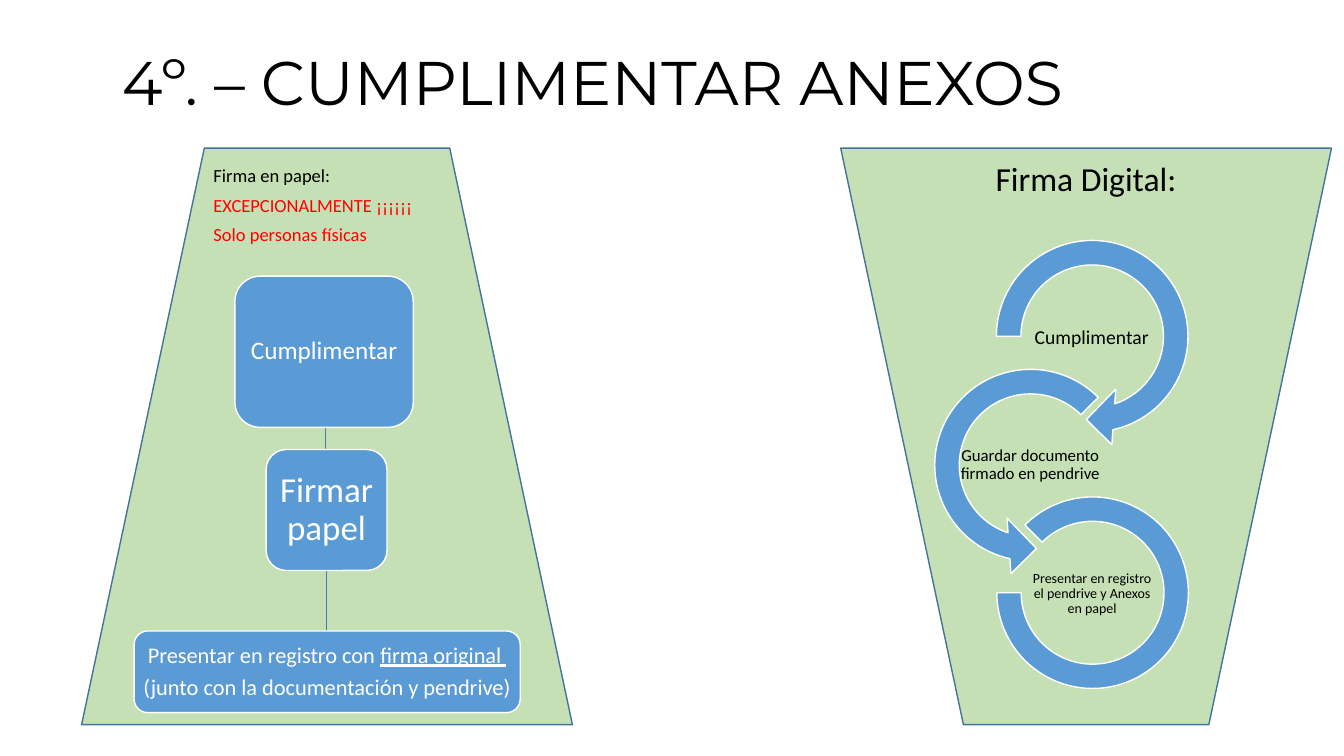
from dataclasses import dataclass

from lxml.etree import SubElement
from pptx import Presentation
from pptx.dml.color import RGBColor
from pptx.enum.shapes import MSO_CONNECTOR, MSO_SHAPE
from pptx.enum.text import MSO_ANCHOR, PP_ALIGN
from pptx.oxml.ns import qn
from pptx.util import Pt


@dataclass(frozen=True)
class Theme:
    heading_font: str = "Montserrat"
    body_font: str = "Calibri"
    black: RGBColor = RGBColor(0, 0, 0)
    white: RGBColor = RGBColor(255, 255, 255)
    red: RGBColor = RGBColor(255, 0, 0)
    green: RGBColor = RGBColor(0xC5, 0xE0, 0xB4)
    outline: RGBColor = RGBColor(0x43, 0x73, 0x9E)
    blue: RGBColor = RGBColor(0x5B, 0x9B, 0xD5)
    link: RGBColor = RGBColor(0x49, 0x7C, 0xAB)
    title_size: float = 44
    digital_size: float = 24
    paper_size: float = 13.2
    box_sizes: tuple = (18, 25, 16)
    cycle_sizes: tuple = (14, 12, 10)


theme = Theme()

presentation = Presentation()
presentation.slide_width, presentation.slide_height = Pt(960), Pt(540)
slide = presentation.slides.add_slide(presentation.slide_layouts[6])


def add_figure(kind, bounds, fill, line):
    figure = slide.shapes.add_shape(kind, *map(Pt, bounds))
    figure.shadow.inherit = False
    figure.fill.solid()
    figure.fill.fore_color.rgb = fill
    figure.line.color.rgb = line
    figure.line.width = Pt(1)
    return figure


def write(holder, lines, size, color, align=PP_ALIGN.CENTER, anchor=MSO_ANCHOR.MIDDLE,
          inset=None, spacing=0.9, gap=0, font=theme.body_font):
    frame = holder.text_frame
    frame.word_wrap = True
    frame.vertical_anchor = anchor
    if inset is not None:
        frame.margin_left = frame.margin_right = Pt(inset)
        frame.margin_top = frame.margin_bottom = Pt(inset)
    frame.text = "\n".join(lines)
    for number, paragraph in enumerate(frame.paragraphs):
        paragraph.alignment = align
        paragraph.line_spacing = spacing
        if number:
            paragraph.space_before = Pt(gap)
        paragraph.font.size = Pt(size)
        paragraph.font.name = font
        paragraph.font.color.rgb = color
    return frame


# Green panels: paper on the left, digital upside down on the right
for left, turn in ((58.3, 0), (600.5, 180)):
    panel = add_figure(MSO_SHAPE.TRAPEZOID, (left, 105.8, 350.6, 411.8),
                       theme.green, theme.outline)
    panel.rotation = turn

# Title and panel headings
title = slide.shapes.add_textbox(Pt(31), Pt(21.6), Pt(796.3), Pt(67))
write(title, ["4º. – CUMPLIMENTAR ANEXOS "], theme.title_size, theme.black,
      anchor=MSO_ANCHOR.BOTTOM, font=theme.heading_font)

paper_heading = slide.shapes.add_textbox(Pt(145.4), Pt(118.1), Pt(238.3), Pt(63.4))
paper_text = write(
    paper_heading,
    ["Firma en papel:", "EXCEPCIONALMENTE ¡¡¡¡¡¡", "Solo personas físicas"],
    theme.paper_size, theme.red, PP_ALIGN.LEFT, MSO_ANCHOR.TOP, spacing=0.7, gap=10)
paper_text.paragraphs[0].font.color.rgb = theme.black

digital_heading = slide.shapes.add_textbox(Pt(687.6), Pt(112.3), Pt(219.6), Pt(54))
digital_text = write(digital_heading, ["Firma Digital:"], theme.digital_size, theme.black,
                     PP_ALIGN.LEFT, MSO_ANCHOR.TOP)
digital_text.margin_left = Pt(23.5)

# Links between the paper steps
for x, top, bottom in ((232.6, 305.3, 321.1), (233.3, 407.5, 450.7)):
    link = slide.shapes.add_connector(MSO_CONNECTOR.STRAIGHT,
                                      Pt(x), Pt(top), Pt(x), Pt(bottom))
    link.line.color.rgb = theme.link
    link.line.width = Pt(1)
    SubElement(link._element.spPr, qn("a:effectLst"))

# Paper steps
paper_steps = [
    ((167.8, 197.3, 127.4, 108), ["Cumplimentar"], 3.6),
    ((190.1, 321.1, 86.4, 86.4), ["Firmar papel"], 5),
    ((95.8, 450.7, 275.8, 58.3),
     ["Presentar en registro con ", "(junto con la documentación y pendrive)"], 2.9),
]
for (bounds, lines, inset), size in zip(paper_steps, theme.box_sizes):
    step = add_figure(MSO_SHAPE.ROUNDED_RECTANGLE, bounds, theme.blue, theme.white)
    step_text = write(step, lines, size, theme.white, inset=inset, gap=5.6)

original_signature = step_text.paragraphs[0].add_run()
original_signature.text = "firma original "
original_signature.font.underline = True

# Digital steps: ring bounds, ring adjustments, label bounds, label
digital_steps = [
    (MSO_SHAPE.CIRCULAR_ARROW, (700.6, 160.6, 159.1, 159.1),
     (0.11, 11.423, 45, 108, 0.125),
     (722.2, 208.1, 115.2, 66.2), "Cumplimentar"),
    (MSO_SHAPE.LEFT_CIRCULAR_ARROW, (656.6, 252.7, 159.1, 159.1),
     (0.11, 11.423, 63, 189, 0.125),
     (682.6, 282.2, 106.6, 100.1), "Guardar documento firmado en pendrive"),
    (MSO_SHAPE.BLOCK_ARC, (712.1, 355, 136.8, 136.8),
     (135, 108, 0.127),
     (735.8, 402.5, 88.6, 43.9), "Presentar en registro el pendrive y Anexos en papel"),
]
for (kind, bounds, adjustments, label_bounds, words), size in zip(digital_steps,
                                                                  theme.cycle_sizes):
    ring = add_figure(kind, bounds, theme.blue, theme.white)
    for index, value in enumerate(adjustments):
        ring.adjustments[index] = value
    label = slide.shapes.add_textbox(*map(Pt, label_bounds))
    write(label, [words], size, theme.black, inset=0.7)

presentation.save("out.pptx")
